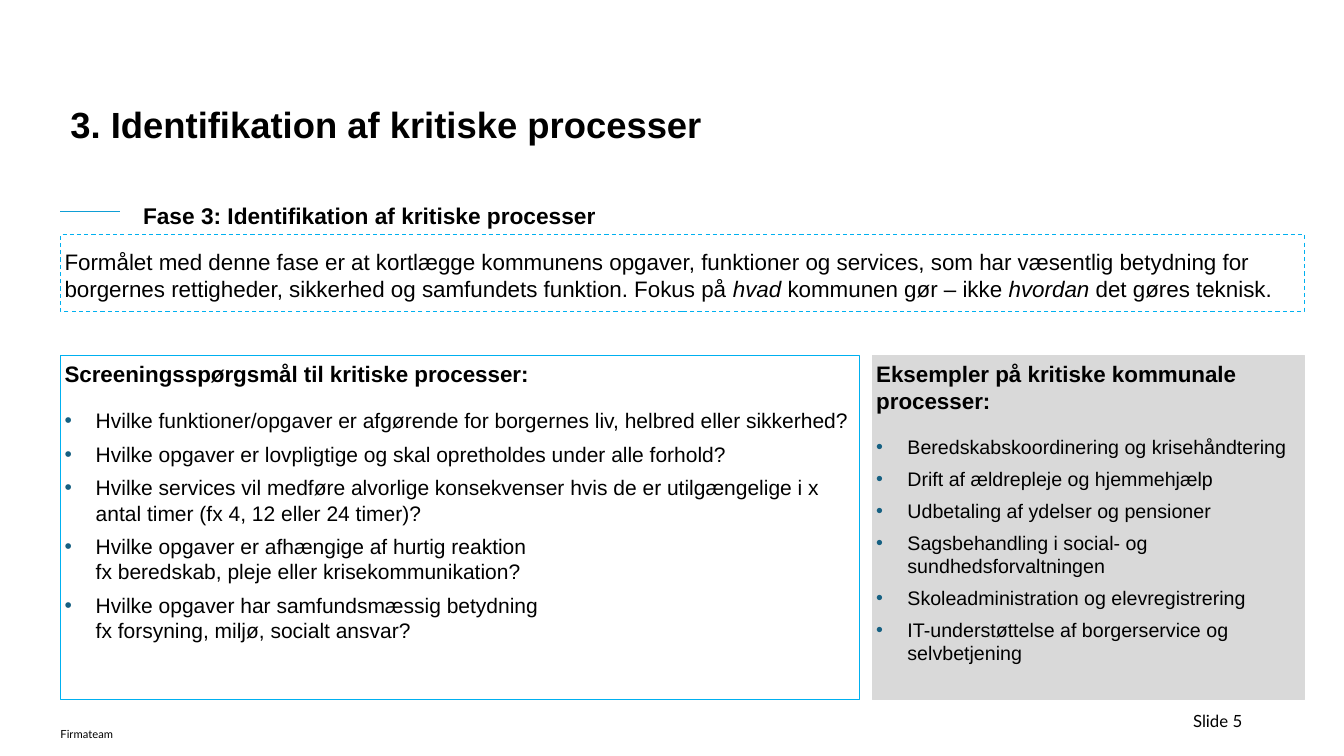
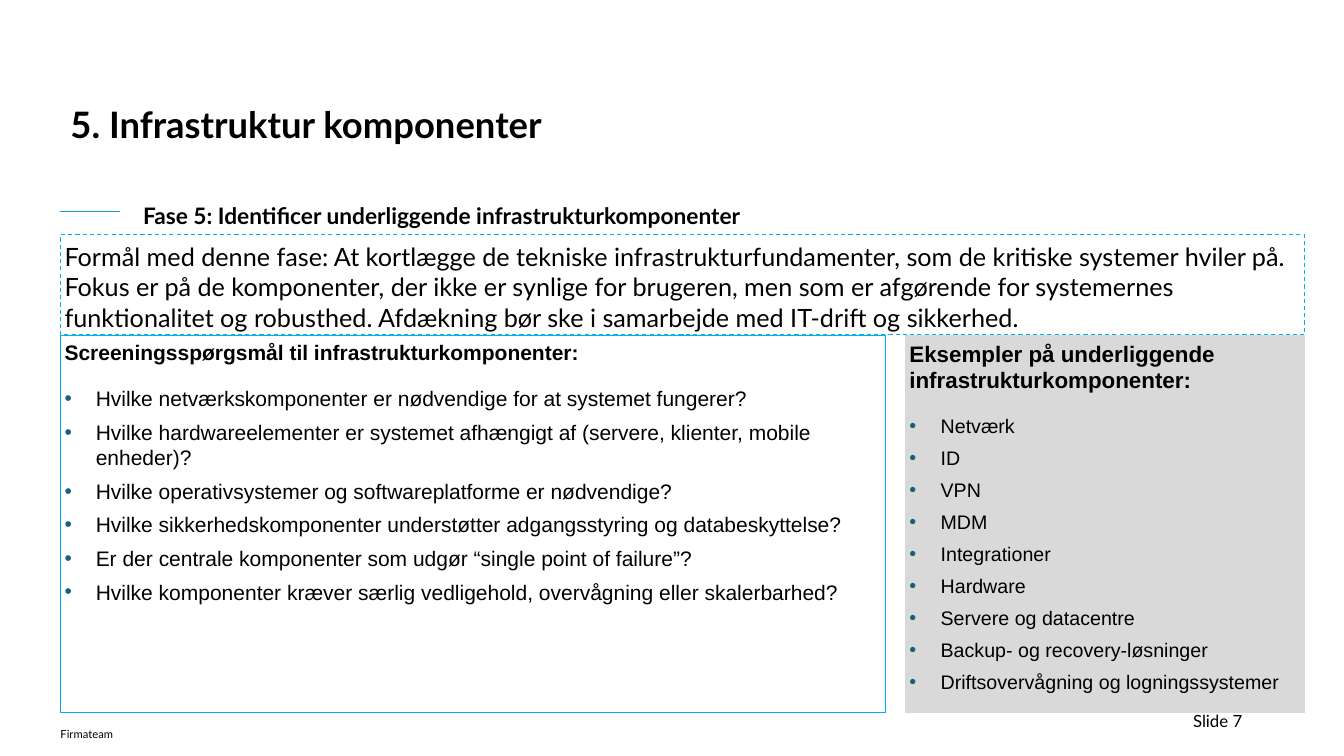
"""Build two slides on screening critical processes and infrastructure."""
from lxml.etree import SubElement
from pptx import Presentation
from pptx.dml.color import RGBColor as RGB
from pptx.enum.dml import MSO_LINE as DASH
from pptx.enum.shapes import MSO_CONNECTOR as LINK, MSO_SHAPE as SHAPE
from pptx.enum.text import MSO_ANCHOR as ANCHOR, PP_ALIGN as ALIGN
from pptx.oxml.ns import qn
from pptx.util import Inches, Pt

HUES = {"ink": "000000", "rule": "0F9ED5", "edge": "00B0F0",
        "gray": "D9D9D9", "white": "FFFFFF", "dot": "156082"}
LEFT, RIGHT = 0.6, 12.94
TOP = 2.33

PAGES = [
    {
        "number": 5,
        "font": "Arial",
        "title": "3. Identifikation af kritiske processer",
        "phase": "Fase 3: Identifikation af kritiske processer",
        "aim": "Formålet med denne fase er at kortlægge kommunens opgaver, "
               "funktioner og services, som har væsentlig betydning for "
               "borgernes rettigheder, sikkerhed og samfundets funktion. "
               "Fokus på *hvad* kommunen gør – ikke *hvordan* det gøres teknisk.",
        "aim_size": 16,
        "aim_high": 0.76,
        "top": 3.53,
        "high": 3.41,
        "wide": 7.93,
        "split": 8.65,
        "head_size": 16,
        "asks": [
            "Screeningsspørgsmål til kritiske processer:",
            "Hvilke funktioner/opgaver er afgørende for borgernes liv, helbred eller sikkerhed?",
            "Hvilke opgaver er lovpligtige og skal opretholdes under alle forhold?",
            "Hvilke services vil medføre alvorlige konsekvenser hvis de er "
            "utilgængelige i x antal timer (fx 4, 12 eller 24 timer)?",
            "Hvilke opgaver er afhængige af hurtig reaktion\v"
            "fx beredskab, pleje eller krisekommunikation?",
            "Hvilke opgaver har samfundsmæssig betydning\v"
            "fx forsyning, miljø, socialt ansvar?",
        ],
        "cases": [
            "Eksempler på kritiske kommunale\vprocesser:",
            "Beredskabskoordinering og krisehåndtering",
            "Drift af ældrepleje og hjemmehjælp",
            "Udbetaling af ydelser og pensioner",
            "Sagsbehandling i social- og sundhedsforvaltningen",
            "Skoleadministration og elevregistrering",
            "IT-understøttelse af borgerservice og selvbetjening",
        ],
    },
    {
        "number": 7,
        "font": "Lato",
        "title": "5. Infrastruktur komponenter",
        "phase": "Fase 5: Identificer underliggende infrastrukturkomponenter",
        "aim": "Formål med denne fase: At kortlægge de tekniske "
               "infrastrukturfundamenter, som de kritiske systemer hviler på. "
               "Fokus er på de komponenter, der ikke er synlige for brugeren, "
               "men som er afgørende for systemernes funktionalitet og "
               "robusthed. Afdækning bør ske i samarbejde med IT-drift og sikkerhed.",
        "aim_size": 18,
        "aim_high": 0.99,
        "top": 3.33,
        "high": 3.74,
        "wide": 8.18,
        "split": 8.98,
        "head_size": 15,
        "asks": [
            "Screeningsspørgsmål til infrastrukturkomponenter:",
            "Hvilke netværkskomponenter er nødvendige for at systemet fungerer?",
            "Hvilke hardwareelementer er systemet afhængigt af (servere, klienter, mobile enheder)?",
            "Hvilke operativsystemer og softwareplatforme er nødvendige?",
            "Hvilke sikkerhedskomponenter understøtter adgangsstyring og databeskyttelse?",
            "Er der centrale komponenter som udgør “single point of failure”?",
            "Hvilke komponenter kræver særlig vedligehold, overvågning eller skalerbarhed?",
        ],
        "cases": [
            "Eksempler på underliggende infrastrukturkomponenter:",
            "Netværk",
            "ID",
            "VPN",
            "MDM",
            "Integrationer",
            "Hardware",
            "Servere og datacentre",
            "Backup- og recovery-løsninger",
            "Driftsovervågning og logningssystemer",
        ],
    },
]


def style(part, size, font, bold=False):
    """Set the type of each run in a paragraph."""
    for run in part.runs:
        run.font.size = Pt(size)
        run.font.name = font
        run.font.bold = bold
        run.font.color.rgb = RGB.from_string(HUES["ink"])


def panel(slide, at, edge, fill=None):
    """Add a framed rectangle and return it."""
    box = slide.shapes.add_shape(SHAPE.RECTANGLE, *map(Inches, at))
    box.shadow.inherit = False
    if fill:
        box.fill.solid()
        box.fill.fore_color.rgb = RGB.from_string(HUES[fill])
    else:
        box.fill.background()
    box.line.color.rgb = RGB.from_string(HUES[edge])
    box.line.width = Pt(0.75)
    frame = box.text_frame
    frame.word_wrap = True
    frame.margin_left = frame.margin_top = Inches(0.04)
    frame.margin_right = frame.margin_bottom = 0
    return box


deck = Presentation()
deck.slide_width, deck.slide_height = Inches(13.33), Inches(7.5)

for page in PAGES:
    slide = deck.slides.add_slide(deck.slide_layouts[6])
    font = page["font"]

    rule = slide.shapes.add_connector(
        LINK.STRAIGHT, Inches(LEFT), Inches(2.1), Inches(1.19), Inches(2.1))
    rule.line.color.rgb = RGB.from_string(HUES["rule"])
    rule.line.width = Pt(1)
    SubElement(rule._element.spPr, qn("a:effectLst"))

    labels = [
        (page["title"], (LEFT, 0.56, 9.72, 0.94), 26, font, True, ANCHOR.BOTTOM, ALIGN.LEFT, 0.9, True),
        (page["phase"], (1.32, 1.98, 9.72, 0.35), 16.2, font, True, ANCHOR.TOP, ALIGN.LEFT, 0.9, True),
        ("Firmateam", (LEFT, 7.15, 1.3, 0.2), 8, "Lato", False, ANCHOR.BOTTOM, ALIGN.LEFT, 1.1, False),
        (f"Slide {page['number']}", (9.42, 6.95, 3, 0.4), 12, "Lato", False, ANCHOR.MIDDLE, ALIGN.RIGHT, 1.0, True),
    ]
    for text, at, size, face, bold, anchor, align, space, inset in labels:
        frame = slide.shapes.add_textbox(*map(Inches, at)).text_frame
        frame.word_wrap = True
        frame.vertical_anchor = anchor
        if not inset:
            frame.margin_left = frame.margin_right = 0
            frame.margin_top = frame.margin_bottom = 0
        frame.text = text
        part = frame.paragraphs[0]
        part.alignment = align
        part.line_spacing = space
        style(part, size, face, bold)

    top, high, split = page["top"], page["high"], page["split"]
    lists = [
        (page["asks"], (LEFT, top, page["wide"], high), "edge", None, page["head_size"], 15),
        (page["cases"], (split, top, RIGHT - split, high), "gray", "gray", 16, 14),
    ]
    for lines, at, edge, fill, large, small in lists:
        frame = panel(slide, at, edge, fill).text_frame
        frame.vertical_anchor = ANCHOR.TOP
        frame.text = "\n".join(lines)
        head, *items = frame.paragraphs
        head.alignment = ALIGN.LEFT
        head.space_after = Pt(12)
        style(head, large, "Arial", True)
        for item in items:
            item.alignment = ALIGN.LEFT
            item.space_before = item.space_after = Pt(3)
            style(item, small, "Arial")
            props = item._p.get_or_add_pPr()
            props.set("marL", str(Inches(0.31)))
            props.set("indent", str(-Inches(0.31)))
            tint = SubElement(props, qn("a:buClr"))
            SubElement(tint, qn("a:srgbClr"), val=HUES["dot"])
            SubElement(props, qn("a:buFont"), typeface="Arial")
            SubElement(props, qn("a:buChar"), char="•")

    aim = panel(slide, (LEFT, TOP, RIGHT - LEFT, page["aim_high"]), "edge", "white")
    aim.line.dash_style = DASH.DASH
    aim.text_frame.vertical_anchor = ANCHOR.MIDDLE
    part = aim.text_frame.paragraphs[0]
    part.alignment = ALIGN.LEFT
    part.space_after = Pt(12)
    for spot, text in enumerate(page["aim"].split("*")):
        run = part.add_run()
        run.text = text
        run.font.italic = spot % 2 == 1
    style(part, page["aim_size"], font)

deck.save("out.pptx")
